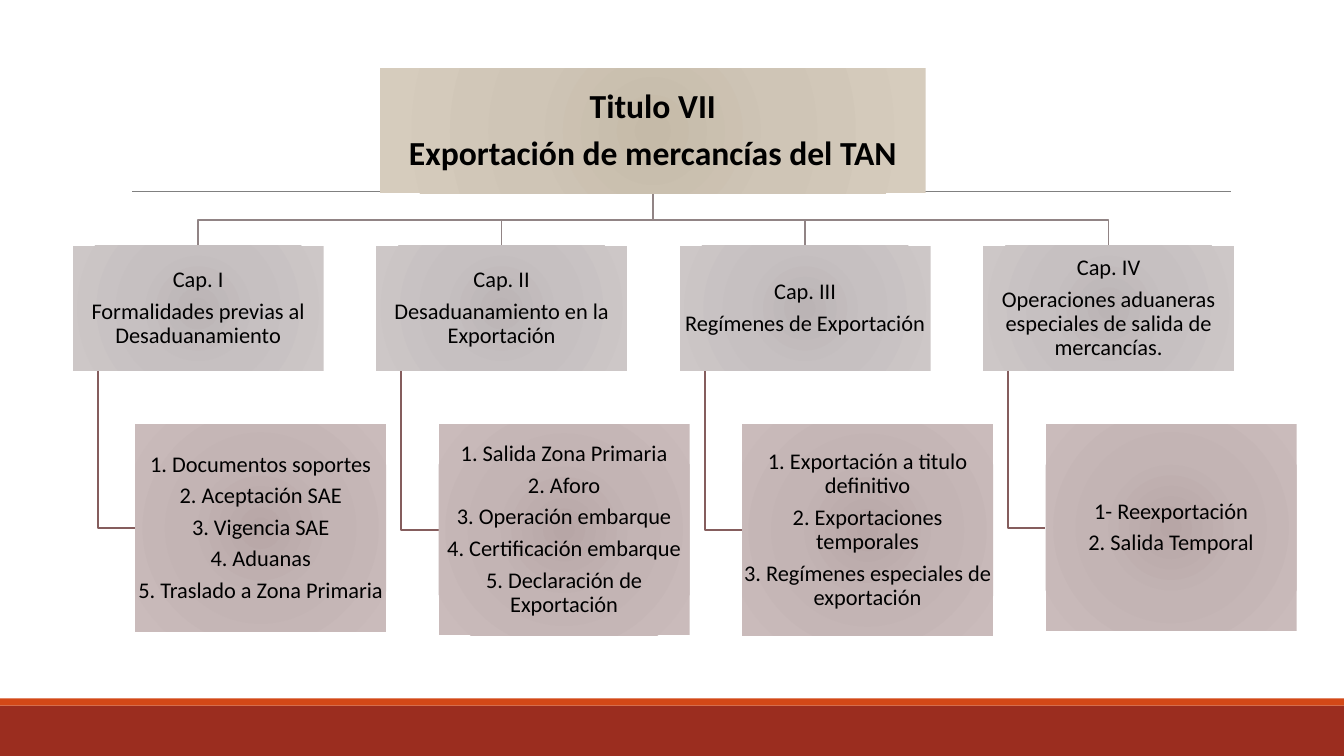
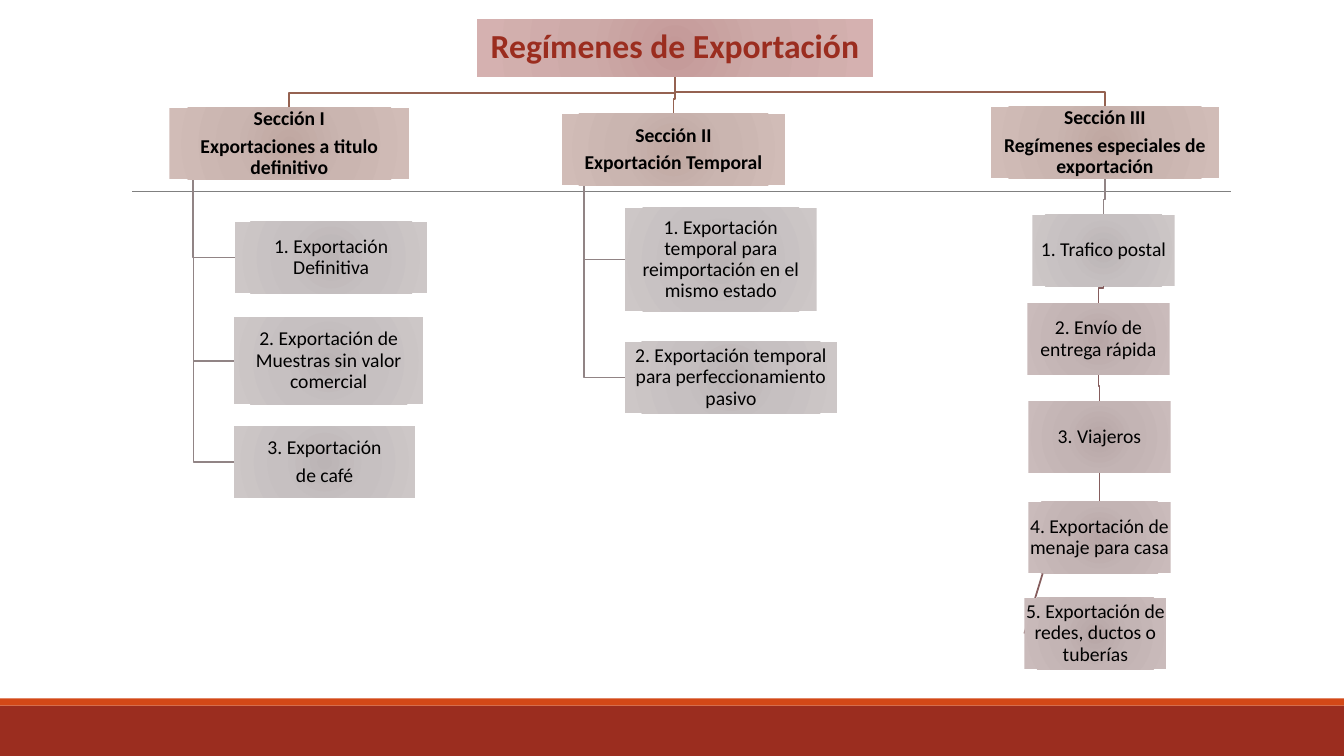
from collections import namedtuple

from pptx import Presentation
from pptx import util as u
from pptx.dml.color import RGBColor
from pptx.enum import shapes, text
from pptx.oxml import parse_xml
from pptx.oxml import ns

BLACK = RGBColor(0x00, 0x00, 0x00)
BRICK = RGBColor(0x9B, 0x2D, 0x1F)
ORANGE = RGBColor(0xD3, 0x48, 0x17)
RULE_GREY = RGBColor(0x80, 0x80, 0x80)
LINK_GREY = RGBColor(0x91, 0x84, 0x85)
LINK_MAUVE = RGBColor(0x85, 0x5D, 0x5D)
LINK_BROWN = RGBColor(0x95, 0x62, 0x51)


def shades(*codes):
    """Return the centre, middle and edge colours of a radial fill."""
    return [RGBColor.from_string(code) for code in codes]


SAND = shades("C5BAA8", "CFC5B6", "D6CCBD")
GREY = shades("BBB4B5", "C6C0C1", "CDC7C7")
MAUVE = shades("B7A6A6", "C3B4B4", "CABBBB")
ROSE = shades("C49998", "CDAAA8", "D5B1B0")
CLAY = shades("BFA7A1", "CAB5B0", "D1BCB7")

Box = namedtuple("Box", "left top width height")

HEADING = {"size": u.Pt(24), "bold": True, "name": "Calibri"}
CHAPTER = {"size": u.Pt(16), "bold": False, "name": "Calibri"}
SECTION = {"size": u.Pt(14), "bold": True, "name": "Calibri"}
ITEM = {"size": u.Pt(14), "bold": False, "name": "Calibri"}

CHAPTERS = [
    (["Cap. I", "Formalidades previas al Desaduanamiento"], 2.06,
     ["1. Documentos soportes", "2. Aceptación SAE", "3. Vigencia SAE",
      "4. Aduanas", "5. Traslado a Zona Primaria"]),
    (["Cap. II", "Desaduanamiento en la Exportación"], 2.09,
     ["1. Salida Zona Primaria", "2. Aforo", "3. Operación embarque",
      "4. Certificación embarque", "5. Declaración de Exportación"]),
    (["Cap. III", "Regímenes de Exportación"], 2.1,
     ["1. Exportación a titulo definitivo", "2. Exportaciones temporales",
      "3. Regímenes especiales de exportación"]),
    (["Cap. IV", "Operaciones aduaneras especiales de salida de mercancías."],
     2.05, ["1- Reexportación", "2. Salida Temporal"]),
]

BRANCHED_SECTIONS = [
    (Box(1.68, 1.07, 2.38, 0.71),
     ["Sección I", "Exportaciones a titulo definitivo"],
     [(Box(0.65, 1.13, 1.91, 0.71), ["1. Exportación Definitiva"]),
      (Box(0.64, 2.08, 1.88, 0.86),
       ["2. Exportación de Muestras sin valor comercial"]),
      (Box(0.64, 3.16, 1.8, 0.71), ["3. Exportación", "de café"])]),
    (Box(5.57, 1.13, 2.22, 0.71),
     ["Sección II", "Exportación Temporal"],
     [(Box(0.63, 0.93, 1.9, 1.03),
       ["1. Exportación temporal para reimportación en el mismo estado"]),
      (Box(0.63, 2.26, 2.1, 0.71),
       ["2. Exportación temporal para perfeccionamiento pasivo"])]),
]

CHAINED_SECTION = (
    Box(9.83, 1.06, 2.26, 0.71),
    ["Sección III", "Regímenes especiales de exportación"],
    [(0.41, 1.07, "1. Trafico postal", GREY),
     (0.36, 1.95, "2. Envío de entrega rápida", MAUVE),
     (0.37, 2.92, "3. Viajeros", MAUVE),
     (0.37, 3.92, "4. Exportación de menaje para casa", MAUVE),
     (0.33, 4.87, "5. Exportación de redes, ductos o tuberías", MAUVE)])


def add_rect(slide, box):
    """Add a rectangle without outline or shadow."""
    rect = slide.shapes.add_shape(
        shapes.MSO_SHAPE.RECTANGLE, *[u.Inches(side) for side in box])
    rect.shadow.inherit = False
    rect.line.fill.background()
    return rect


def fill_radial(panel, colours):
    """Give a panel a circular gradient from its centre outwards."""
    stops = "".join(
        f'<a:gs pos="{pos}"><a:srgbClr val="{colour}"/></a:gs>'
        for pos, colour in zip((0, 45000, 100000), colours))
    gradient = parse_xml(
        f'<a:gradFill {ns.nsdecls("a")} rotWithShape="1"><a:gsLst>{stops}</a:gsLst>'
        '<a:path path="circle"><a:fillToRect l="100000" t="100000" '
        'r="100000" b="100000"/></a:path></a:gradFill>')
    panel.fill.background()
    properties = panel._element.spPr
    properties.replace(properties.find(ns.qn("a:noFill")), gradient)


def add_panel(slide, box, lines, colours, style, ink=BLACK):
    """Add a shaded panel with centred paragraphs."""
    panel = add_rect(slide, box)
    fill_radial(panel, colours)
    frame = panel.text_frame
    frame.word_wrap = True
    frame.vertical_anchor = text.MSO_ANCHOR.MIDDLE
    for side in ("left", "top", "right", "bottom"):
        setattr(frame, f"margin_{side}", u.Inches(0.01))
    layout = {"alignment": text.PP_ALIGN.CENTER, "line_spacing": 0.9,
              "space_after": u.Pt(round(style["size"].pt * 0.33, 1))}
    for index, line in enumerate(lines):
        paragraph = frame.add_paragraph() if index else frame.paragraphs[0]
        for name, value in layout.items():
            setattr(paragraph, name, value)
        run = paragraph.add_run()
        run.text = line
        for name, value in style.items():
            setattr(run.font, name, value)
        run.font.color.rgb = ink


def add_line(slide, start, end, colour, width=1.25):
    """Add a straight line between two points."""
    line = slide.shapes.add_connector(
        shapes.MSO_CONNECTOR.STRAIGHT, *[u.Inches(v) for v in (*start, *end)])
    line.line.color.rgb = colour
    line.line.width = u.Pt(width)
    line._element.spPr.append(parse_xml(f'<a:effectLst {ns.nsdecls("a")}/>'))


def add_bent_line(slide, points, colour):
    """Add an open line through several points."""
    start, *rest = [(u.Inches(x), u.Inches(y)) for x, y in points]
    builder = slide.shapes.build_freeform(*start)
    builder.add_line_segments(rest, close=False)
    bend = builder.convert_to_shape()
    bend.shadow.inherit = False
    bend.fill.background()
    bend.line.color.rgb = colour
    bend.line.width = u.Pt(1.25)


def link_down(slide, parent, child, colour, drop=0.15):
    """Link the foot of a parent to the head of a child."""
    start = (parent.left + parent.width / 2, parent.top + parent.height)
    end = (child.left + child.width / 2, child.top)
    if abs(start[0] - end[0]) < 0.005:
        add_line(slide, start, end, colour)
    else:
        turn = child.top - drop
        add_bent_line(
            slide, [start, (start[0], turn), (end[0], turn), end], colour)


def link_side(slide, parent, child, colour, bent=True):
    """Link the foot of a parent to the left side of a child."""
    start = (parent.left + parent.width / 10, parent.top + parent.height)
    end = (child.left, child.top + child.height / 2)
    if bent:
        add_bent_line(slide, [start, (start[0], end[1]), end], colour)
    else:
        add_line(slide, start, end, colour)


def new_slide(deck):
    """Add a blank slide with the footer bands and the rule."""
    slide = deck.slides.add_slide(deck.slide_layouts[6])
    for box, colour in ((Box(0, 7, 13.33, 0.5), BRICK),
                        (Box(0, 6.93, 13.33, 0.07), ORANGE)):
        band = add_rect(slide, box)
        band.fill.solid()
        band.fill.fore_color.rgb = colour
    add_line(slide, (1.31, 1.9), (12.21, 1.9), RULE_GREY, 0.5)
    return slide


def chapter_column(slide, chapter, lines, detail_height, details):
    """Place a chapter and the panel of details below it."""
    detail = Box(chapter.left + 0.62, chapter.top + 1.77,
                 chapter.width, detail_height)
    link_side(slide, chapter, detail, LINK_MAUVE)
    add_panel(slide, chapter, lines, GREY, CHAPTER)
    add_panel(slide, detail, details, MAUVE, CHAPTER)


def chapters_slide(deck):
    """Build the chart of the title and its chapters."""
    slide = new_slide(deck)
    title = Box(3.77, 0.68, 5.41, 1.24)
    for index, (lines, detail_height, details) in enumerate(CHAPTERS):
        chapter = Box(0.72 + 3.01 * index, 2.44, 2.49, 1.24)
        link_down(slide, title, chapter, LINK_GREY, 0.26)
        chapter_column(slide, chapter, lines, detail_height, details)
    add_panel(slide, title, ["Titulo VII", "Exportación de mercancías del TAN"],
              SAND, HEADING)


def branched_section(slide, section, lines, items):
    """Place a section with its items hung from one stem."""
    for offset, item_lines in items:
        item = offset._replace(left=section.left + offset.left,
                               top=section.top + offset.top)
        link_side(slide, section, item, LINK_GREY)
        add_panel(slide, item, item_lines, GREY, ITEM)
    add_panel(slide, section, lines, CLAY, SECTION)


def chained_section(slide, section, lines, items):
    """Place a section with its items linked one after another."""
    above = section
    for index, (across, down, line, colours) in enumerate(items):
        item = Box(section.left + across, section.top + down, 1.41, 0.71)
        colour = LINK_MAUVE if index else LINK_GREY
        if index == len(items) - 1:
            link_side(slide, above, item, colour, bent=False)
        else:
            link_down(slide, above, item, colour)
        add_panel(slide, item, [line], colours, ITEM)
        above = item
    add_panel(slide, section, lines, CLAY, SECTION)


def regimes_slide(deck):
    """Build the chart of the export regimes and their sections."""
    slide = new_slide(deck)
    title = Box(4.73, 0.19, 3.93, 0.57)
    for section, *_ in (*BRANCHED_SECTIONS, CHAINED_SECTION):
        link_down(slide, title, section, LINK_BROWN)
    for branch in BRANCHED_SECTIONS:
        branched_section(slide, *branch)
    chained_section(slide, *CHAINED_SECTION)
    add_panel(slide, title, ["Regímenes de Exportación"], ROSE, HEADING, BRICK)


def main():
    """Build and save the deck."""
    deck = Presentation()
    deck.slide_width = u.Inches(13.33)
    deck.slide_height = u.Inches(7.5)
    chapters_slide(deck)
    regimes_slide(deck)
    deck.save("out.pptx")


if __name__ == "__main__":
    main()
